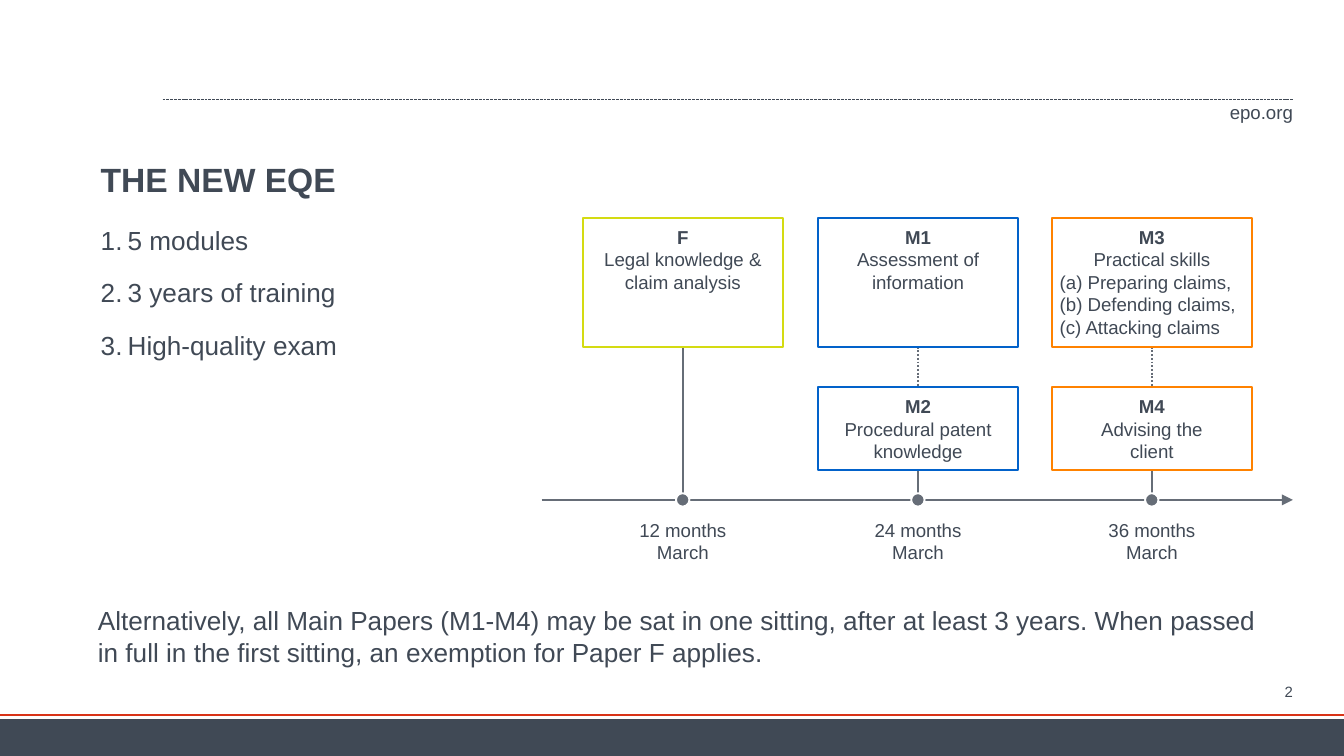
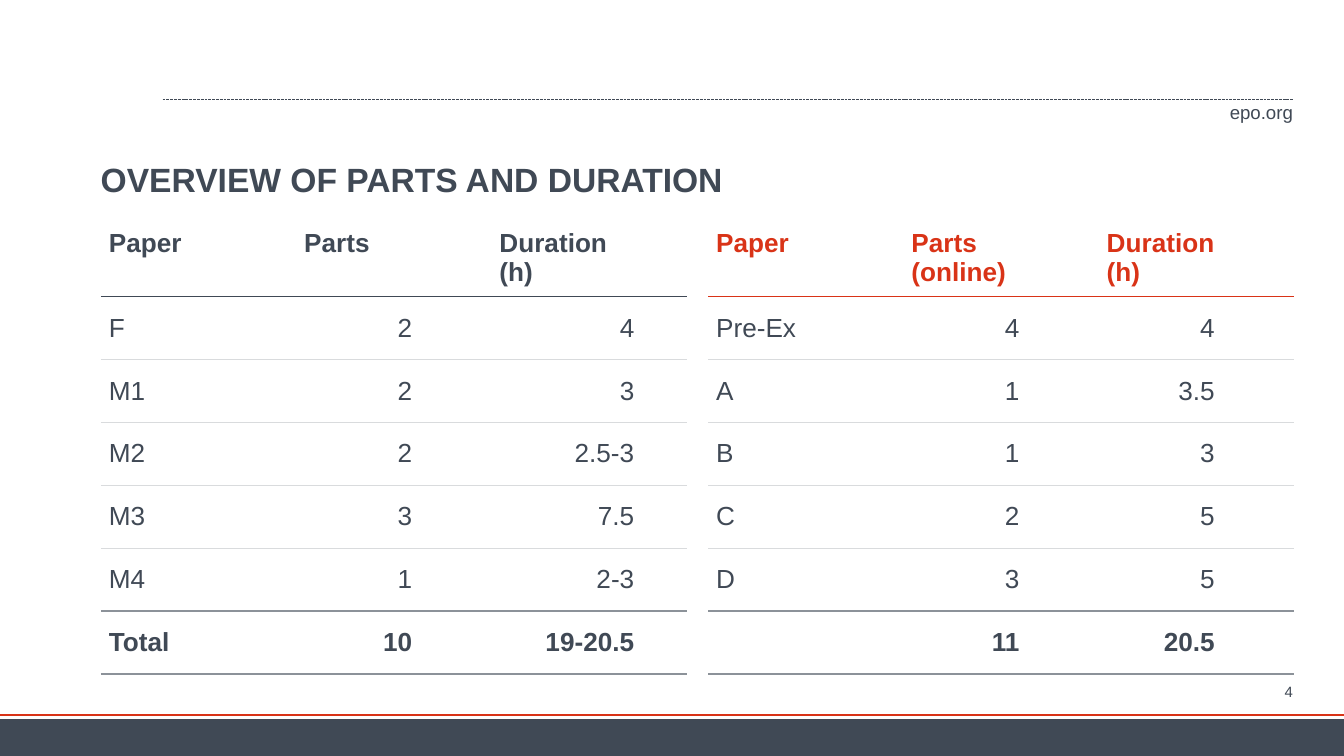
"""Build two slides on the new EQE: its timeline and its parts and duration."""
from copy import deepcopy

from lxml.etree import SubElement
from pptx import Presentation
from pptx.dml.color import RGBColor
from pptx.enum.dml import MSO_LINE as Dash
from pptx.enum.shapes import MSO_CONNECTOR as Connector, MSO_SHAPE as Shape
from pptx.enum.text import MSO_ANCHOR as Anchor, PP_ALIGN as Align
from pptx.oxml import parse_xml
from pptx.oxml.ns import nsdecls, qn
from pptx.util import Inches, Pt

INK, RED, WHITE = "404955", "D93317", "FFFFFF"
LIME, BLUE, ORANGE = "D4DB12", "0262CA", "FF8200"
AXIS, RULE, TOTAL_RULE = "666D77", "D9DBDD", "8C9299"
NO_GRID_STYLE = "{2D5ABB26-0587-4C30-8999-92F81FD0307C}"
color = RGBColor.from_string


def write_text(frame, text, size=10, bold=False, ink=INK, align=Align.LEFT):
    paragraph = frame.add_paragraph() if frame.text else frame.paragraphs[0]
    paragraph.text = text
    paragraph.alignment = align
    for run in paragraph.runs:
        run.font.name = "Arial"
        run.font.size = Pt(size)
        run.font.bold = bold
        run.font.color.rgb = color(ink)
    for line_break in paragraph._p.findall(qn("a:br")):
        line_break.append(deepcopy(run._r.rPr))
    return paragraph


def add_box(slide, left, top, width, height, fill=None, outline=None,
            kind=Shape.RECTANGLE, margin=0, anchor=Anchor.TOP, wrap=True):
    place = [Inches(length) for length in (left, top, width, height)]
    if fill:
        shape = slide.shapes.add_shape(kind, *place)
        shape.shadow.inherit = False
        shape.fill.solid()
        shape.fill.fore_color.rgb = color(fill)
        if outline:
            shape.line.color.rgb = color(outline)
            shape.line.width = Pt(1)
        else:
            shape.line.fill.background()
    else:
        shape = slide.shapes.add_textbox(*place)
    frame = shape.text_frame
    frame.word_wrap = wrap
    frame.vertical_anchor = anchor
    frame.margin_left = frame.margin_right = Inches(margin)
    frame.margin_top = frame.margin_bottom = Inches(margin)
    return frame


presentation = Presentation()
presentation.slide_width = Inches(10)
presentation.slide_height = Inches(10 * 9 / 16)

centers = (5.08, 6.83, 8.57)
box_width = 1.49
upper_bottom, lower_top, lower_bottom, axis_y, dot_top = 2.58, 2.88, 3.5, 3.72, 3.67
shared_lines = [
    (1.21, 0.74, 9.62, 0.74, INK, 0.5, Dash.SQUARE_DOT, False),
    (0, 5.32, 10, 5.32, RED, 1.5, None, False),
]
timeline_lines = [
    (4.03, axis_y, 9.62, axis_y, AXIS, 1, None, True),
    (centers[0], upper_bottom, centers[0], dot_top, AXIS, 1, None, False),
]
for center in centers[1:]:
    timeline_lines += [
        (center, upper_bottom, center, lower_top, AXIS, 1, Dash.ROUND_DOT, False),
        (center, lower_bottom, center, dot_top, AXIS, 1, None, False),
    ]

slides = []
for title, number, lines in (
    ("THE NEW EQE", "2", timeline_lines),
    ("OVERVIEW OF PARTS AND DURATION", "4", []),
):
    slide = presentation.slides.add_slide(presentation.slide_layouts[6])
    slides.append(slide)
    frame = add_box(slide, 9.15, 0.75, 0.47, 0.17, anchor=Anchor.MIDDLE, wrap=False)
    write_text(frame, "epo.org", align=Align.RIGHT)
    add_box(slide, 0, 5.35, 10, 0.28, fill=INK)
    for left, top, right, bottom, ink, width, dash, arrow in shared_lines + lines:
        connector = slide.shapes.add_connector(
            Connector.STRAIGHT, Inches(left), Inches(top), Inches(right), Inches(bottom))
        connector.line.color.rgb = color(ink)
        connector.line.width = Pt(width)
        if dash:
            connector.line.dash_style = dash
        properties = connector._element.spPr
        if arrow:
            SubElement(properties.find(qn("a:ln")), qn("a:tailEnd"), type="triangle")
        SubElement(properties, qn("a:effectLst"))
    frame = add_box(slide, 0.75, 0.88, 8.87, 0.6, anchor=Anchor.BOTTOM)
    write_text(frame, title, size=18, bold=True)
    frame = add_box(slide, 9.03, 5.08, 0.59, 0.13, anchor=Anchor.MIDDLE)
    write_text(frame, number, size=8, align=Align.RIGHT)

timeline_slide, table_slide = slides

frame = add_box(timeline_slide, 0.75, 1.62, 8.87, 3.4)
for index, feature in enumerate(("5 modules", "3 years of training", "High-quality exam")):
    paragraph = write_text(frame, feature, size=14)
    paragraph.line_spacing = 1.2
    if index:
        paragraph.space_before = Pt(8)
    properties = paragraph._p.get_or_add_pPr()
    properties.set("marL", str(Inches(0.2)))
    properties.set("indent", str(Inches(-0.2)))
    SubElement(properties, qn("a:buFont"), typeface="+mj-lt")
    SubElement(properties, qn("a:buAutoNum"), type="arabicPeriod")

frame = add_box(timeline_slide, 0.63, 4.45, 8.99, 0.57)
frame.margin_left = frame.margin_right = Inches(0.1)
frame.margin_top = frame.margin_bottom = Inches(0.05)
write_text(frame, "Alternatively, all Main Papers (M1-M4) may be sat in one sitting, after at "
           "least 3 years. When passed in full in the first sitting, an exemption for "
           "Paper F applies.", size=14)

skills = ("(a) Preparing claims,", "(b) Defending claims,", "(c) Attacking claims")
modules = [
    (0, 1.62, 0.96, LIME, "F", "Legal knowledge & claim analysis", ()),
    (1, 1.62, 0.96, BLUE, "M1", "Assessment of information", ()),
    (1, lower_top, 0.62, BLUE, "M2", "Procedural patent knowledge", ()),
    (2, 1.62, 0.96, ORANGE, "M3", "Practical skills", skills),
    (2, lower_top, 0.62, ORANGE, "M4", "Advising the\nclient", ()),
]
for column, top, height, outline, module, subject, details in modules:
    frame = add_box(timeline_slide, centers[column] - box_width / 2, top, box_width, height,
                    fill=WHITE, outline=outline, margin=0.06)
    write_text(frame, module, bold=True, align=Align.CENTER)
    write_text(frame, subject, align=Align.CENTER)
    for detail in details:
        write_text(frame, detail)

for center, months in zip(centers, (12, 24, 36)):
    add_box(timeline_slide, center - 0.05, dot_top, 0.1, 0.1,
            fill=AXIS, outline=WHITE, kind=Shape.OVAL)
    frame = add_box(timeline_slide, center - box_width / 2, 3.8, box_width, 0.46,
                    fill=WHITE, margin=0.06)
    write_text(frame, f"{months} months\nMarch", align=Align.CENTER)

rows = [
    (("Paper",), ("Parts",), ("Duration", "(h)"), (),
     ("Paper",), ("Parts\n(online)",), ("Duration", "(h)")),
    ("F", "2", "4", "", "Pre-Ex", "4", "4"),
    ("M1", "2", "3", "", "A", "1", "3.5"),
    ("M2", "2", "2.5-3", "", "B", "1", "3"),
    ("M3", "3", "7.5", "", "C", "2", "5"),
    ("M4", "1", "2-3", "", "D", "3", "5"),
    ("Total", "10", "19-20.5", "", "", "11", "20.5"),
]
gap_column, last_row = 3, len(rows) - 1
table_width, table_height, gap_width, header_height = 8.87, 3.4, 0.15, 0.59
table = table_slide.shapes.add_table(
    len(rows), 7, Inches(0.75), Inches(1.61), Inches(table_width), Inches(table_height)).table
table.first_row = table.horz_banding = False
table._tbl.tblPr.find(qn("a:tableStyleId")).text = NO_GRID_STYLE
for index, column in enumerate(table.columns):
    column.width = Inches(gap_width if index == gap_column else (table_width - gap_width) / 6)
for index, row in enumerate(table.rows):
    row.height = Inches((table_height - header_height) / last_row if index else header_height)

for row_index, values in enumerate(rows):
    header = row_index == 0
    for column_index, value in enumerate(values):
        cell = table.cell(row_index, column_index)
        cell.fill.background()
        cell.margin_left = cell.margin_right = Inches(0.06)
        cell.margin_top = cell.margin_bottom = Inches(0.06)
        if column_index == gap_column:
            continue
        accent = INK if column_index < gap_column else RED
        numeric = not header and column_index not in (0, 4)
        if header:
            cell.margin_top, cell.margin_bottom = Inches(0.09), Inches(0.04)
        if numeric:
            cell.margin_right = Inches(0.39 if column_index == 2 else 0.59)
        cell.vertical_anchor = Anchor.TOP if header else Anchor.MIDDLE
        for text in value if header else (value,):
            write_text(cell.text_frame, text, size=14, bold=row_index in (0, last_row),
                       ink=accent if header else INK,
                       align=Align.RIGHT if numeric else Align.LEFT)
        rules = [(accent, 1)] + [(RULE, 0.75)] * 4 + [(TOTAL_RULE, 1)] * 2
        borders = [("lnB", rules[row_index])]
        if not header:
            borders.append(("lnT", rules[row_index - 1]))
        for tag, (ink, width) in borders:
            cell._tc.get_or_add_tcPr().insert(0, parse_xml(
                f'<a:{tag} {nsdecls("a")} w="{Pt(width)}"><a:solidFill>'
                f'<a:srgbClr val="{ink}"/></a:solidFill></a:{tag}>'))

presentation.save("out.pptx")
